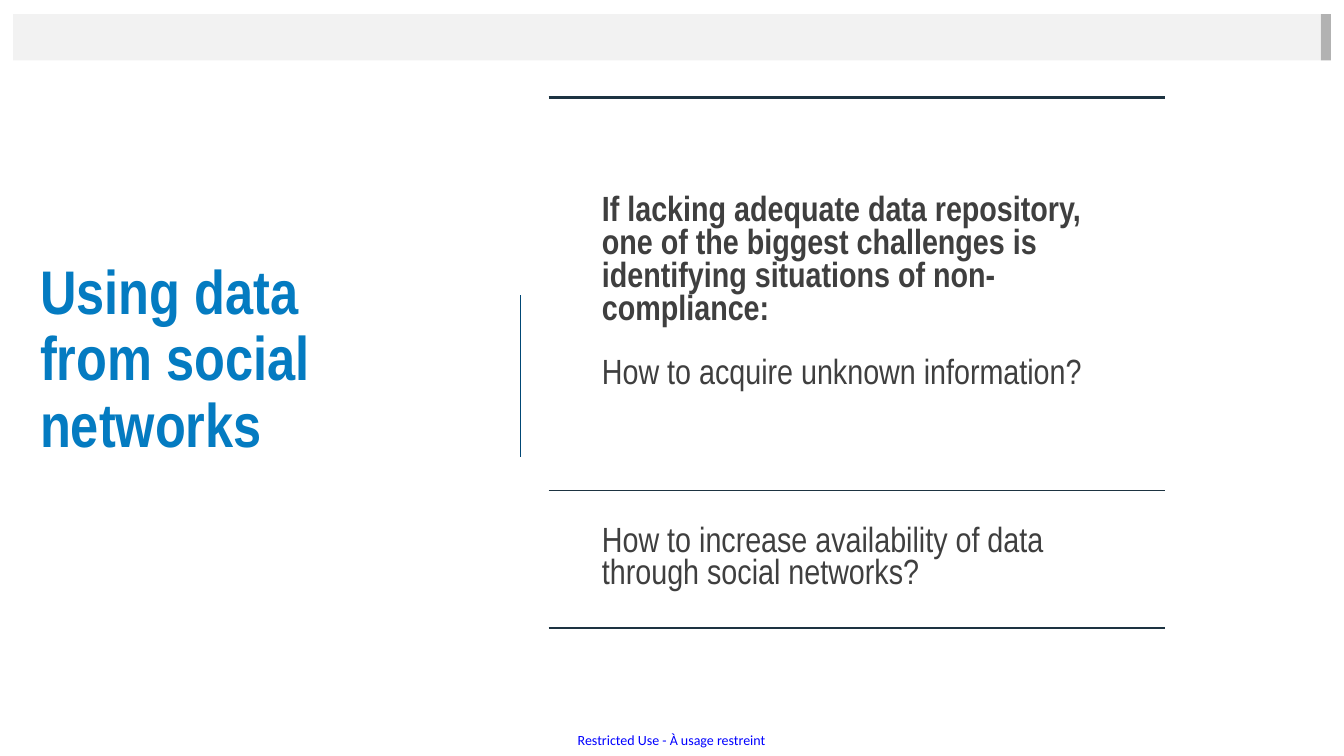
from dataclasses import dataclass

from lxml.etree import SubElement as Sub
from pptx import Presentation
from pptx.dml.color import RGBColor as RGB
from pptx.enum.shapes import MSO_CONNECTOR as Conn, MSO_SHAPE as Shape
from pptx.enum.text import MSO_ANCHOR as Anchor
from pptx.oxml.ns import qn
from pptx.util import Inches, Pt


@dataclass(frozen=True)
class Theme:
    band: str = "F2F2F2"
    tab: str = "B2B2B2"
    title: str = "047BC1"
    rule: str = "004775"
    border: str = "1D3341"
    body: str = "3F3F3F"
    mark: str = "0000FF"
    face: str = "Arial Narrow"
    mark_face: str = "Calibri"
    title_size: float = 44
    body_size: float = 25
    mark_size: float = 10
    thick: float = 2.25
    thin: float = 1
    hair: float = 0.5


THEME = Theme()
QUESTIONS = [
    [
        ("If lacking adequate data repository, one of the biggest challenges "
         "is identifying situations of non-compliance:", True),
        ("How to acquire unknown information?", False),
    ],
    [("How to increase availability of data through social networks?", False)],
]


def add_run(para, text, face, size, color, bold=False):
    run = para.add_run()
    run.text = text
    font = run.font
    font.name, font.size, font.bold = face, Pt(size), bold
    font.color.rgb = RGB.from_string(color)


def add_bar(slide, box, color):
    bar = slide.shapes.add_shape(Shape.RECTANGLE, *map(Inches, box))
    bar.shadow.inherit = False
    bar.fill.solid()
    bar.fill.fore_color.rgb = RGB.from_string(color)
    bar.line.fill.background()


def add_header(slide, box, tab=0.1):
    left, top, width, height = box
    add_bar(slide, (left, top, width - tab, height), THEME.band)
    add_bar(slide, (left + width - tab, top, tab, height), THEME.tab)


def add_mark(slide, box):
    """Add the line that states the restricted use."""
    frame = slide.shapes.add_textbox(*map(Inches, box)).text_frame
    frame.margin_left = frame.margin_right = 0
    frame.margin_top = frame.margin_bottom = 0
    frame.word_wrap = False
    add_run(frame.paragraphs[0], "Restricted Use - À usage restreint",
            THEME.mark_face, THEME.mark_size, THEME.mark)


def add_rule(slide, left, top, height):
    ends = map(Inches, (left, top, left, top + height))
    rule = slide.shapes.add_connector(Conn.STRAIGHT, *ends)
    rule.line.color.rgb = RGB.from_string(THEME.rule)
    rule.line.width = Pt(THEME.hair)
    Sub(rule._element.spPr, qn("a:effectLst"))


def add_title(slide, box):
    frame = slide.shapes.add_textbox(*map(Inches, box)).text_frame
    frame.word_wrap = True
    frame.vertical_anchor = Anchor.MIDDLE
    para = frame.paragraphs[0]
    para.line_spacing = 0.9
    add_run(para, "Using data from social networks",
            THEME.face, THEME.title_size, THEME.title, True)


def set_borders(cell, top, bottom):
    """Draw the top and bottom edges and leave the sides open."""
    props = cell._tc.get_or_add_tcPr()
    edges = {"lnL": 0, "lnR": 0, "lnT": top, "lnB": bottom}
    for tag, width in edges.items():
        edge = Sub(props, qn(f"a:{tag}"), w=str(Pt(width)))
        if width:
            fill = Sub(edge, qn("a:solidFill"))
            Sub(fill, qn("a:srgbClr"), val=THEME.border)
        else:
            Sub(edge, qn("a:noFill"))
    cell.fill.background()


def fill_cell(cell, lines):
    cell.vertical_anchor = Anchor.MIDDLE
    cell.margin_left = cell.margin_right = Inches(0.15)
    cell.margin_top = cell.margin_bottom = Inches(0.15)
    frame = cell.text_frame
    for i, (text, bold) in enumerate(lines):
        para = frame.add_paragraph() if i else frame.paragraphs[0]
        para.line_spacing = 1.0
        if i:
            para.space_before = Pt(23)
        add_run(para, text, THEME.face, THEME.body_size, THEME.body, bold)


def add_questions(slide, box, side=0.38, first=3.9):
    """Add the ruled table, with an empty column on each side of the text."""
    width, height = box[2:]
    table = slide.shapes.add_table(2, 3, *map(Inches, box)).table
    table.first_row = table.horz_banding = False
    for col, size in zip(table.columns, (side, width - 2 * side, side)):
        col.width = Inches(size)
    for row, size in zip(table.rows, (first, height - first)):
        row.height = Inches(size)
    for r, lines in enumerate(QUESTIONS):
        for c in range(3):
            top = THEME.thin if r else THEME.thick
            set_borders(table.cell(r, c), top, THEME.thin)
        fill_cell(table.cell(r, 1), lines)


def main():
    deck = Presentation()
    deck.slide_width, deck.slide_height = Inches(13.33), Inches(7.5)
    slide = deck.slides.add_slide(deck.slide_layouts[6])
    add_header(slide, (0.13, 0.14, 13.07, 0.46))
    add_mark(slide, (5.73, 7.26, 1.91, 0.17))
    add_rule(slide, 5.16, 2.93, 1.6)
    add_title(slide, (0.3, 2.48, 3.22, 2.2))
    add_questions(slide, (5.44, 0.97, 6.11, 5.26))
    deck.save("out.pptx")


if __name__ == "__main__":
    main()
